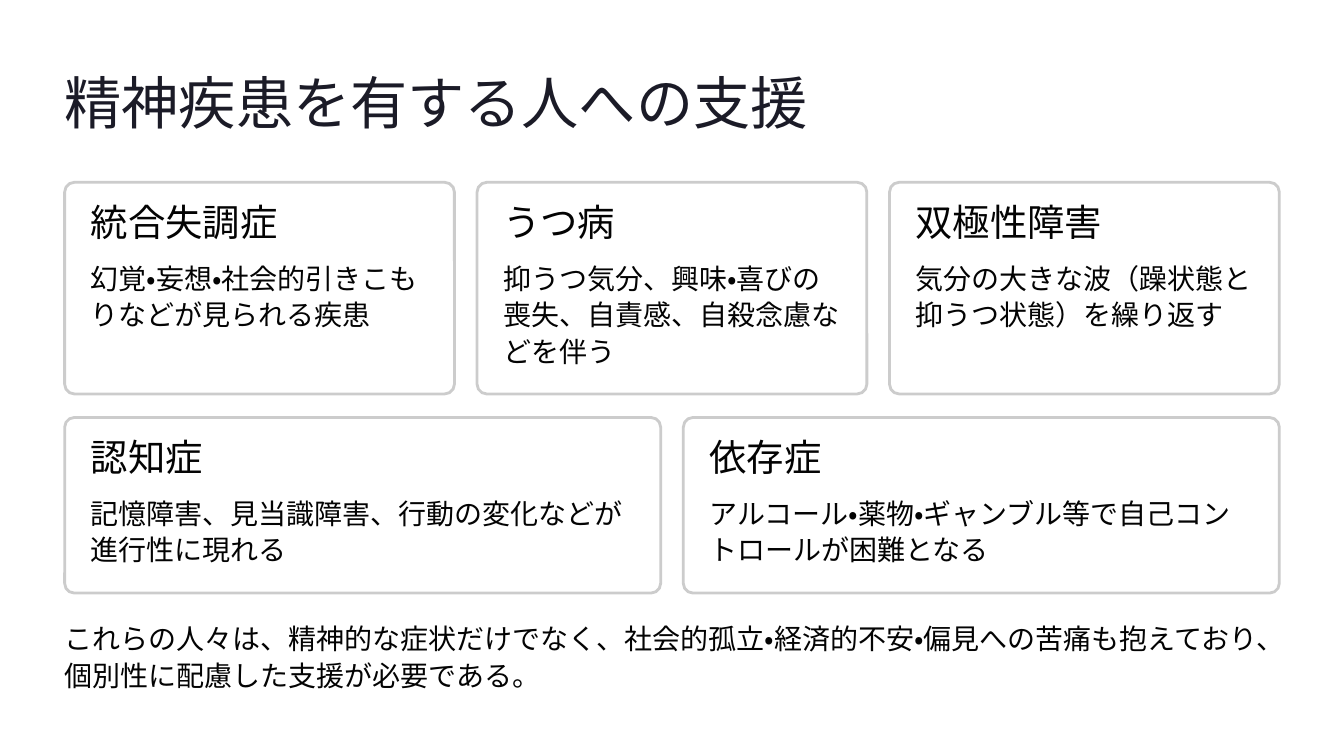
import math

from lxml import etree
from pptx import Presentation
from pptx.dml.color import RGBColor
from pptx.enum.lang import MSO_LANGUAGE_ID
from pptx.enum.shapes import MSO_SHAPE
from pptx.enum.text import MSO_ANCHOR, MSO_AUTO_SIZE, PP_ALIGN
from pptx.oxml.ns import qn
from pptx.util import Inches, Pt

TITLE = "精神疾患を有する人への支援"
# Each row: top, height, corner radius ratio, cards (heading, description)
CARD_ROWS = [
    (2.17, 2.52, 0.046, [
        ("統合失調症", "幻覚・妄想・社会的引きこもりなどが見られる疾患"),
        ("うつ病", "抑うつ気分、興味・喜びの喪失、自責感、自殺念慮などを伴う"),
        ("双極性障害", "気分の大きな波（躁状態と抑うつ状態）を繰り返す"),
    ]),
    (4.97, 2.09, 0.055, [
        ("認知症", "記憶障害、見当識障害、行動の変化などが進行性に現れる"),
        ("依存症", "アルコール・薬物・ギャンブル等で自己コントロールが困難となる"),
    ]),
]
SUMMARY = (
    "これらの人々は、精神的な症状だけでなく、社会的孤立・経済的不安・"
    "偏見への苦痛も抱えており、個別性に配慮した支援が必要である。"
)

TITLE_COLOR = RGBColor(0x1B, 0x1B, 0x27)
TEXT_COLOR = RGBColor(0x03, 0x03, 0x03)
CARD_FILL = RGBColor(0xFF, 0xFF, 0xFF)
CARD_LINE = RGBColor(0xCC, 0xCC, 0xCC)

# Font, size and line spacing in points, colour
TITLE_STYLE = ("Inter", 49, 61.5, TITLE_COLOR)
HEADING_STYLE = ("Inter", 32, 30.5, TEXT_COLOR)
BODY_STYLE = ("Cabin", 24, 31.5, TEXT_COLOR)

ROUNDED = MSO_SHAPE.ROUNDED_RECTANGLE
TOP = MSO_ANCHOR.TOP
LEFT = PP_ALIGN.LEFT
NO_AUTOFIT = MSO_AUTO_SIZE.NONE
JAPANESE = MSO_LANGUAGE_ID.JAPANESE

MARGIN = 0.77
CONTENT_WIDTH = 14.46
GAP = 0.27
PADDING = 0.31
BODY_LINE = 0.44


def write_text(box, text, style, wrap):
    font_name, size, spacing, color = style
    frame = box.text_frame
    frame.margin_left = frame.margin_top = 0
    frame.margin_right = frame.margin_bottom = 0
    frame.auto_size = NO_AUTOFIT
    frame.word_wrap = wrap
    frame.vertical_anchor = TOP
    para = frame.paragraphs[0]
    para.alignment = LEFT
    para.line_spacing = Pt(spacing)
    span = para.add_run()
    span.text = text
    span.font.name = font_name
    span.font.size = Pt(size)
    span.font.color.rgb = color
    span.font.language_id = JAPANESE


def add_body(slide, left, top, width, text):
    """Add wrapped body text in a box as tall as its lines need."""
    characters_per_line = int(width * 72 / BODY_STYLE[1])
    lines = math.ceil(len(text) / characters_per_line)
    box = slide.shapes.add_textbox(
        Inches(left), Inches(top), Inches(width), Inches(lines * BODY_LINE))
    write_text(box, text, BODY_STYLE, True)


def add_card(slide, left, top, width, height, radius, heading, description):
    card = slide.shapes.add_shape(
        ROUNDED, Inches(left), Inches(top), Inches(width), Inches(height))
    card.adjustments[0] = radius
    card.shadow.inherit = False
    card.fill.solid()
    card.fill.fore_color.rgb = CARD_FILL
    fill_color = card.fill._xPr.find(qn("a:solidFill"))[0]
    etree.SubElement(fill_color, qn("a:alpha"), val="95000")
    card.line.color.rgb = CARD_LINE
    card.line.width = Pt(2.4)

    text_left = left + PADDING
    heading_box = slide.shapes.add_textbox(
        Inches(text_left), Inches(top + PADDING), Inches(3.43), Inches(0.43))
    write_text(heading_box, heading, HEADING_STYLE, False)
    add_body(slide, text_left, top + 0.9, width - 2 * PADDING, description)


def main():
    deck = Presentation()
    deck.slide_width, deck.slide_height = Inches(16), Inches(9)
    slide = deck.slides.add_slide(deck.slide_layouts[5])

    title = slide.shapes.title
    title.left, title.top = Inches(MARGIN), Inches(0.76)
    title.width, title.height = Inches(8.91), Inches(0.86)
    write_text(title, TITLE, TITLE_STYLE, False)

    for top, height, radius, cards in CARD_ROWS:
        width = (CONTENT_WIDTH - GAP * (len(cards) - 1)) / len(cards)
        for column, (heading, description) in enumerate(cards):
            left = MARGIN + column * (width + GAP)
            add_card(slide, left, top, width, height, radius,
                     heading, description)

    add_body(slide, MARGIN, 7.36, CONTENT_WIDTH, SUMMARY)
    deck.save("out.pptx")


if __name__ == "__main__":
    main()
